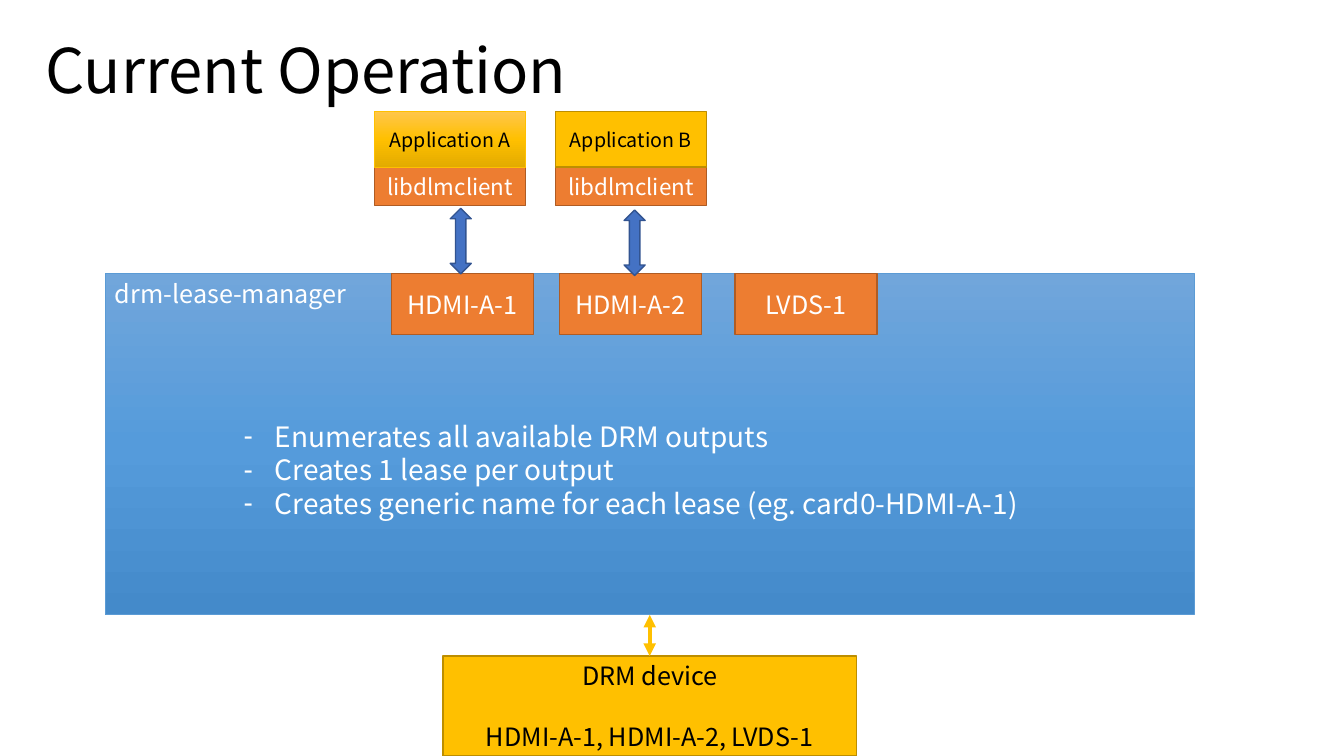
from copy import deepcopy
from dataclasses import dataclass

from lxml import etree
from pptx import Presentation
from pptx.dml.color import RGBColor
from pptx.enum.dml import MSO_FILL
from pptx.enum.shapes import MSO_CONNECTOR, MSO_SHAPE
from pptx.enum.text import MSO_ANCHOR, MSO_AUTO_SIZE, PP_ALIGN
from pptx.oxml.ns import qn
from pptx.util import Inches, Pt

RECTANGLE = MSO_SHAPE.RECTANGLE
UP_DOWN_ARROW = MSO_SHAPE.UP_DOWN_ARROW
STRAIGHT = MSO_CONNECTOR.STRAIGHT
GRADIENT = MSO_FILL.GRADIENT
TOP, MIDDLE = MSO_ANCHOR.TOP, MSO_ANCHOR.MIDDLE
LEFT, CENTER = PP_ALIGN.LEFT, PP_ALIGN.CENTER
TOP_SIDE, BOTTOM_SIDE = 0, 2

SLIDE_WIDTH, SLIDE_HEIGHT = Inches(13.33), Inches(7.5)
COLUMNS, ROWS = 160, 90


@dataclass(frozen=True)
class Look:
    """Fill colours (several make a downward gradient), outline and text colour."""
    fills: tuple[str, ...]
    line: str
    line_width: float = 1
    text: str = "FFFFFF"


@dataclass(frozen=True)
class Theme:
    font: str = "Noto Sans CJK JP"
    black: str = "000000"
    white: str = "FFFFFF"
    gold: str = "FFC000"
    title_size: int = 44
    list_size: int = 20
    label_size: int = 18
    library_size: int = 16
    application_size: int = 14
    orange_box: Look = Look(("ED7D31",), "AF5C24")
    gold_box: Look = Look(("FFC000",), "BD8E00", text="000000")
    shaded_gold: Look = Look(("FFC64B", "FFC000", "E3AB00"), "FFC000", 0.5, "000000")
    shaded_blue: Look = Look(("71A6DB", "559BDB", "448ACA"), "5B9BD5", 0.5)
    arrow: Look = Look(("4472C4",), "325491")


@dataclass(frozen=True)
class Cell:
    """A place on the slide grid, in columns and rows."""
    column: float
    row: float
    width: float
    height: float

    def lengths(self) -> tuple[int, int, int, int]:
        across, down = SLIDE_WIDTH / COLUMNS, SLIDE_HEIGHT / ROWS
        return (round(self.column * across), round(self.row * down),
                round(self.width * across), round(self.height * down))


@dataclass(frozen=True)
class Application:
    name: str
    column: float
    look: Look


THEME = Theme()
APPLICATIONS = (Application("Application A", 44.6, THEME.shaded_gold),
                Application("Application B", 66.1, THEME.gold_box))
LEASES = {"HDMI-A-1": 46.6, "HDMI-A-2": 66.6, "LVDS-1": 87.5}
ARROWS = (Cell(53.6, 24.8, 2.5, 7.8), Cell(74.3, 25, 2.5, 7.8))
TASKS = ("Enumerates all available DRM outputs",
         "Creates 1 lease per output",
         "Creates generic name for each lease (eg. card0-HDMI-A-1)")


def write(frame, lines: tuple[str, ...], size: int, color: str,
          align=CENTER, anchor=MIDDLE) -> None:
    frame.word_wrap = True
    frame.auto_size = MSO_AUTO_SIZE.NONE
    frame.vertical_anchor = anchor
    for index, line in enumerate(lines):
        para = frame.paragraphs[0] if index == 0 else frame.add_paragraph()
        para.text = line
        para.alignment = align
        para.space_before = Pt(0)
        para.font.name = THEME.font
        para.font.size = Pt(size)
        para.font.color.rgb = RGBColor.from_string(color)


def paint(shape, look: Look) -> None:
    shape.shadow.inherit = False
    if len(look.fills) == 1:
        shape.fill.solid()
        shape.fill.fore_color.rgb = RGBColor.from_string(look.fills[0])
    else:
        shape.fill.gradient()
        shape.fill.gradient_angle = 270
        stop_list = shape._element.spPr.find(qn("a:gradFill")).find(qn("a:gsLst"))
        stop_list.insert(1, deepcopy(stop_list[0]))
        for index, (stop, color) in enumerate(zip(shape.fill.gradient_stops, look.fills)):
            stop.position = index / (len(look.fills) - 1)
            stop.color.rgb = RGBColor.from_string(color)
    shape.line.color.rgb = RGBColor.from_string(look.line)
    shape.line.width = Pt(look.line_width)


def add_box(shapes, cell: Cell, look: Look, lines: tuple[str, ...], size: int,
            align=CENTER, anchor=MIDDLE):
    box = shapes.add_shape(RECTANGLE, *cell.lengths())
    paint(box, look)
    write(box.text_frame, lines, size, look.text, align, anchor)
    return box


def place(shape, cell: Cell) -> None:
    shape.left, shape.top, shape.width, shape.height = cell.lengths()


def add_application(shapes, application: Application) -> None:
    """Group an application with the client library below it."""
    group = shapes.add_group_shape()
    add_box(group.shapes, Cell(application.column, 19.9, 18, 4.6), THEME.orange_box,
            ("libdlmclient",), THEME.library_size)
    add_box(group.shapes, Cell(application.column, 13.3, 18, 6.6), application.look,
            (application.name,), THEME.application_size)


def add_arrow(shapes, cell: Cell) -> None:
    paint(shapes.add_shape(UP_DOWN_ARROW, *cell.lengths()), THEME.arrow)


def join(shapes, lower, upper) -> None:
    """Link the top of one box to the bottom of another, with two arrowheads."""
    link = shapes.add_connector(STRAIGHT, 0, 0, 0, 0)
    link.begin_connect(lower, TOP_SIDE)
    link.end_connect(upper, BOTTOM_SIDE)
    link.line.color.rgb = RGBColor.from_string(THEME.gold)
    link.line.width = Pt(3)
    outline = link.line._get_or_add_ln()
    for end in ("a:headEnd", "a:tailEnd"):
        etree.SubElement(outline, qn(end), type="triangle")
    etree.SubElement(link._element.spPr, qn("a:effectLst"))


def fill_task_list(page, body) -> None:
    place(body, Cell(27.8, 49.3, 106.6, 13.3))
    write(body.text_frame, TASKS, THEME.list_size, THEME.white, LEFT, TOP)
    for para in body.text_frame.paragraphs:
        properties = para._p.get_or_add_pPr()
        properties.set("marL", str(Inches(0.31)))
        properties.set("indent", str(-Inches(0.31)))
        bullet = etree.Element(qn("a:buChar"), char="-")
        properties.find(qn("a:defRPr")).addprevious(bullet)
    page.shapes._spTree.append(body._element)  # in front of the manager box


def main() -> None:
    deck = Presentation()
    deck.slide_width, deck.slide_height = SLIDE_WIDTH, SLIDE_HEIGHT
    page = deck.slides.add_slide(deck.slide_layouts[1])
    shapes = page.shapes

    title = shapes.title
    place(title, Cell(4.2, 0, 138, 17.4))
    write(title.text_frame, ("Current Operation",), THEME.title_size, THEME.black, LEFT)
    title.text_frame.paragraphs[0].line_spacing = 0.9

    for application in APPLICATIONS:
        add_application(shapes, application)
    manager = add_box(shapes, Cell(12.5, 32.5, 129.7, 40.7), THEME.shaded_blue,
                      ("drm-lease-manager",), THEME.label_size, LEFT, TOP)
    device = add_box(shapes, Cell(52.75, 78.1, 49.2, 11.9), THEME.gold_box,
                     ("DRM device", ", ".join(LEASES)), THEME.label_size)
    device.text_frame.paragraphs[1].space_before = Pt(21.5)
    for name, column in LEASES.items():
        add_box(shapes, Cell(column, 32.6, 16.9, 7.2), THEME.orange_box,
                (name,), THEME.label_size)
    for cell in ARROWS:
        add_arrow(shapes, cell)
    join(shapes, device, manager)
    fill_task_list(page, page.placeholders[1])

    deck.save("out.pptx")


if __name__ == "__main__":
    main()
